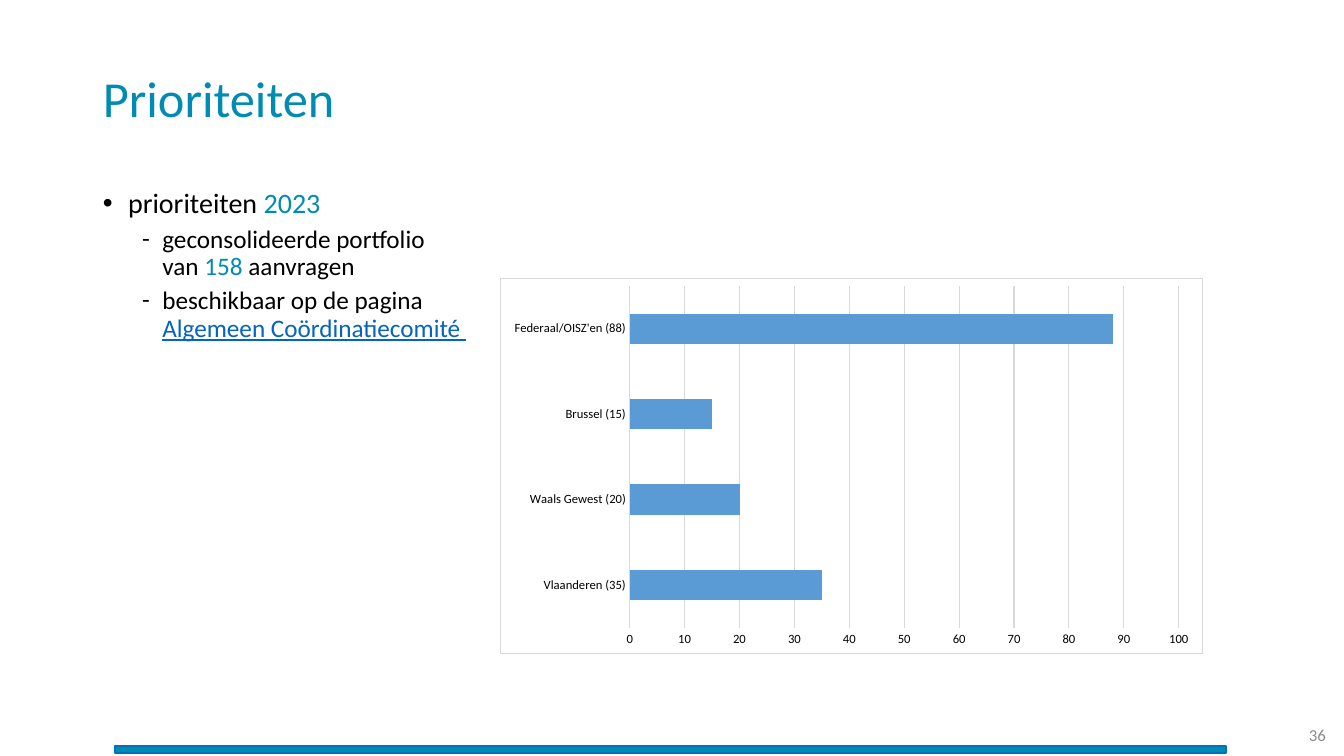
"""Build the slide on the 2023 priorities, with a bar chart of requests per government."""
from lxml.etree import SubElement, fromstring
from pptx import Presentation
from pptx.chart.data import CategoryChartData
from pptx.dml.color import RGBColor
from pptx.enum.chart import XL_CHART_TYPE as ChartType, XL_TICK_MARK as TickMark
from pptx.enum.shapes import MSO_SHAPE as Shape
from pptx.enum.text import MSO_ANCHOR as Anchor, MSO_AUTO_SIZE as AutoSize, PP_ALIGN as Align
from pptx.oxml.ns import nsdecls, qn
from pptx.util import Inches, Pt

FONT = "Calibri"
BLACK = RGBColor(0, 0, 0)
TEAL = RGBColor(0x00, 0x8C, 0xB2)
EDGE_BLUE = RGBColor(0x00, 0x70, 0xC0)
LINK_BLUE = RGBColor(0x05, 0x63, 0xC1)
BAR_BLUE = RGBColor(0x5B, 0x9B, 0xD5)
PAGE_GREY = RGBColor(0x8C, 0x8C, 0x8C)
GRID_GREY = RGBColor(0xD9, 0xD9, 0xD9)

TITLE = "Prioriteiten"
PAGE = "36"
POINTS = [
    (0, [("prioriteiten ", BLACK), ("2023", TEAL)]),
    (1, [("geconsolideerde portfolio \nvan ", BLACK), ("158 ", TEAL), ("aanvragen", BLACK)]),
    (1, [("beschikbaar op de pagina \n", BLACK), ("Algemeen Coördinatiecomité ", LINK_BLUE)]),
]
LEVELS = [
    dict(bullet="•", size=20, left=0.25, hang=0.25, before=10),
    dict(bullet="-", size=18, left=0.59, hang=0.2, before=5),
]
REQUESTS = {"Vlaanderen (35)": 35, "Waals Gewest (20)": 20, "Brussel (15)": 15,
            "Federaal/OISZ'en (88)": 88}

WIDTH, HEIGHT = 13.33, 7.5
MARGIN, CONTENT_WIDTH = 0.92, 11.5
TITLE_BOX = (MARGIN, 0.28, CONTENT_WIDTH, 1.45)
BODY_BOX = (MARGIN, 1.83, CONTENT_WIDTH, 4.76)
CHART_BOX = (4.96, 2.76, 6.97, 3.73)
FOOTER_BAR = (1.14, 7.4, 11.02, 0.07)
PAGE_BOX = (12.43, 7.09, 0.82, 0.4)


def inches(box):
    return [Inches(length) for length in box]


def style(font, size, color):
    font.name, font.size = FONT, Pt(size)
    font.color.rgb = color


def place(holder, box, anchor):
    holder.left, holder.top, holder.width, holder.height = inches(box)
    frame = holder.text_frame
    frame.word_wrap, frame.auto_size, frame.vertical_anchor = True, AutoSize.NONE, anchor
    return frame


def add_run(paragraph, text, size, color):
    for index, line in enumerate(text.split("\n")):
        if index:
            paragraph.add_line_break()
        if line:
            run = paragraph.add_run()
            run.text = line
            style(run.font, size, color)
            run.font.underline = True if color == LINK_BLUE else None


def add_points(frame):
    for index, (level, parts) in enumerate(POINTS):
        look = LEVELS[level]
        paragraph = frame.add_paragraph() if index else frame.paragraphs[0]
        paragraph.level = level
        props = paragraph._p.get_or_add_pPr()
        props.set("marL", str(Inches(look["left"])))
        props.set("indent", str(-Inches(look["hang"])))
        SubElement(props, qn("a:buFont"), typeface="Arial" if level == 0 else FONT)
        SubElement(props, qn("a:buChar"), char=look["bullet"])
        paragraph.line_spacing = 0.9
        paragraph.space_before = Pt(look["before"] if index else 0)
        for text, color in parts:
            add_run(paragraph, text, look["size"], color)


def add_requests_chart(slide):
    data = CategoryChartData()
    data.categories = list(REQUESTS)
    data.add_series("Series 1", list(REQUESTS.values()))
    chart = slide.shapes.add_chart(ChartType.BAR_CLUSTERED, *inches(CHART_BOX), data).chart
    style(chart.font, 10, BLACK)
    chart.has_legend = chart.has_title = False

    plot = chart.plots[0]
    plot.gap_width, plot.vary_by_categories = 182, False
    bars = plot.series[0].format.fill
    bars.solid()
    bars.fore_color.rgb = BAR_BLUE

    governments, counts = chart.category_axis, chart.value_axis
    for axis in (governments, counts):
        axis.major_tick_mark = axis.minor_tick_mark = TickMark.NONE
        style(axis.tick_labels.font, 9, BLACK)
    counts.minimum_scale, counts.maximum_scale, counts.major_unit = 0, 100, 10
    counts.format.line.fill.background()
    governments.has_major_gridlines = False
    for line in (governments.format.line, counts.major_gridlines.format.line):
        line.color.rgb, line.width = GRID_GREY, Pt(0.75)

    frame_look = fromstring(
        f'<c:spPr {nsdecls("c", "a")}><a:solidFill><a:srgbClr val="FFFFFF"/></a:solidFill>'
        f'<a:ln w="{Pt(0.5)}"><a:solidFill><a:srgbClr val="{GRID_GREY}"/></a:solidFill></a:ln></c:spPr>')
    chart._chartSpace.find(qn("c:chart")).addnext(frame_look)


def main():
    deck = Presentation()
    deck.slide_width, deck.slide_height = Inches(WIDTH), Inches(HEIGHT)
    slide = deck.slides.add_slide(deck.slide_layouts[1])

    page = place(slide.shapes.add_textbox(*inches(PAGE_BOX)), PAGE_BOX, Anchor.MIDDLE).paragraphs[0]
    page.alignment = Align.RIGHT
    add_run(page, PAGE, 12, PAGE_GREY)

    footer = slide.shapes.add_shape(Shape.RECTANGLE, *inches(FOOTER_BAR))
    footer.shadow.inherit = False
    footer.fill.solid()
    footer.fill.fore_color.rgb = TEAL
    footer.line.color.rgb, footer.line.width = EDGE_BLUE, Pt(1)

    title = place(slide.shapes.title, TITLE_BOX, Anchor.MIDDLE).paragraphs[0]
    title.alignment, title.line_spacing = Align.LEFT, 0.9
    add_run(title, TITLE, 36, TEAL)

    add_points(place(slide.placeholders[1], BODY_BOX, Anchor.TOP))
    add_requests_chart(slide)
    deck.save("out.pptx")


if __name__ == "__main__":
    main()
